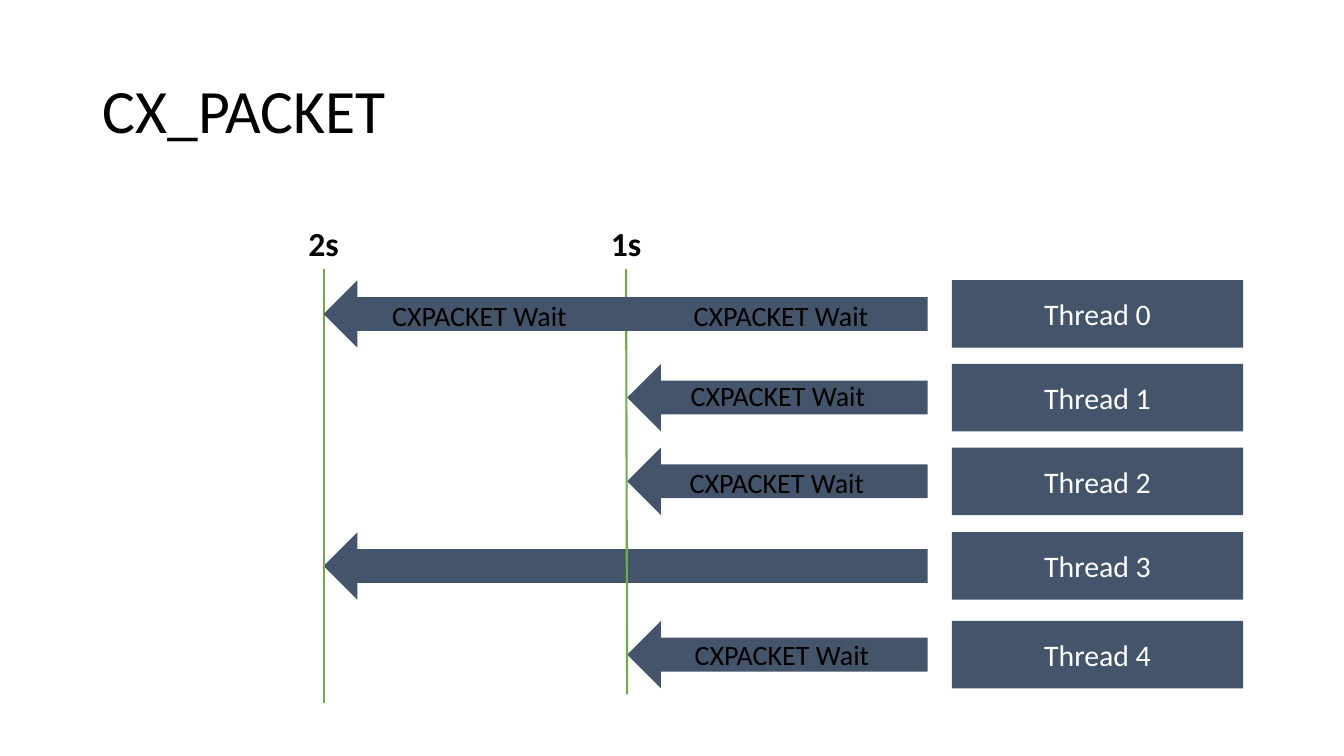
from pptx import Presentation
from pptx import util as u
from pptx.dml.color import RGBColor
from pptx.enum import shapes, text
from pptx.oxml.ns import qn
from lxml import etree

PX = 9144
COLORS = {"slate": "44546A", "green": "70AD47", "black": "000000", "white": "FFFFFF"}
ROW_HEIGHT = 67
ARROW_RIGHT = 920
TWO_SECONDS, ONE_SECOND = 321, 622
WAIT_WIDTH, WAIT_HEIGHT = 289, 44
THREADS = [
    ("Thread 0", 278, TWO_SECONDS, [(630, 13), (331, 13)]),
    ("Thread 1", 361, ONE_SECOND, [(627, 10)]),
    ("Thread 2", 444, ONE_SECOND, [(626, 13)]),
    ("Thread 3", 528, TWO_SECONDS, []),
    ("Thread 4", 616, ONE_SECOND, [(631, 12)]),
]


def px(*lengths):
    """Turn pixel lengths into EMU."""
    return [u.Emu(length * PX) for length in lengths]


def color(name):
    """Look up a colour by name."""
    return RGBColor.from_string(COLORS[name])


def write(shape, words, size, ink, align=text.PP_ALIGN.CENTER, bold=False):
    """Put one formatted paragraph into a shape."""
    shape.text_frame.word_wrap = True
    paragraph = shape.text_frame.paragraphs[0]
    paragraph.text = words
    paragraph.alignment = align
    font = paragraph.font
    font.name, font.size, font.bold = "Calibri", u.Pt(size), bold
    font.color.rgb = color(ink)
    return paragraph


def add_label(slide, box, words, size, bold=False):
    """Add a centred black label in a box."""
    label = slide.shapes.add_textbox(*px(*box))
    write(label, words, size, "black", bold=bold)


def add_block(slide, kind, box):
    """Add a flat slate shape without outline."""
    block = slide.shapes.add_shape(kind, *px(*box))
    block.shadow.inherit = False
    block.fill.solid()
    block.fill.fore_color.rgb = color("slate")
    block.line.fill.background()
    return block


def add_title(slide, box, words):
    """Place and format the title placeholder."""
    title = slide.shapes.title
    title.left, title.top, title.width, title.height = px(*box)
    title.text_frame.vertical_anchor = text.MSO_ANCHOR.MIDDLE
    write(title, words, 44, "black", text.PP_ALIGN.LEFT).line_spacing = 0.9


def add_thread(slide, name, top, tip, waits):
    """Draw a thread's name box, its duration arrow and its wait labels."""
    name_box = add_block(slide, shapes.MSO_SHAPE.RECTANGLE, (944, top, 289, ROW_HEIGHT))
    frame = name_box.text_frame
    frame.margin_left, frame.margin_right, frame.margin_top, frame.margin_bottom = px(13, 13, 7, 7)
    frame.vertical_anchor = text.MSO_ANCHOR.MIDDLE
    write(name_box, name, 21.3, "white")
    add_block(slide, shapes.MSO_SHAPE.LEFT_ARROW, (tip, top, ARROW_RIGHT - tip, ROW_HEIGHT))
    for left, drop in waits:
        add_label(slide, (left, top + drop, WAIT_WIDTH, WAIT_HEIGHT), "CXPACKET Wait", 20)


def add_time_mark(slide, name, start, end, bottom):
    """Draw a time line with its label above."""
    line = slide.shapes.add_connector(
        shapes.MSO_CONNECTOR.STRAIGHT, *px(start, 267, end, bottom))
    line.line.color.rgb = color("green")
    line.line.width = u.Pt(1.5)
    etree.SubElement(line._element.spPr, qn("a:effectLst"))
    add_label(slide, (start - 50, 216, 100, 50), name, 24, bold=True)


def main():
    """Build and save the slide."""
    deck = Presentation()
    deck.slide_width, deck.slide_height = px(1333, 750)
    slide = deck.slides.add_slide(deck.slide_layouts[5])
    add_title(slide, (92, 40, 1150, 145), "CX_PACKET")
    for thread in THREADS[1:]:
        add_thread(slide, *thread)
    add_time_mark(slide, "1s", ONE_SECOND - 1, ONE_SECOND, 689)
    add_time_mark(slide, "2s", TWO_SECONDS, TWO_SECONDS, 697)
    add_thread(slide, *THREADS[0])
    deck.save("out.pptx")


if __name__ == "__main__":
    main()
